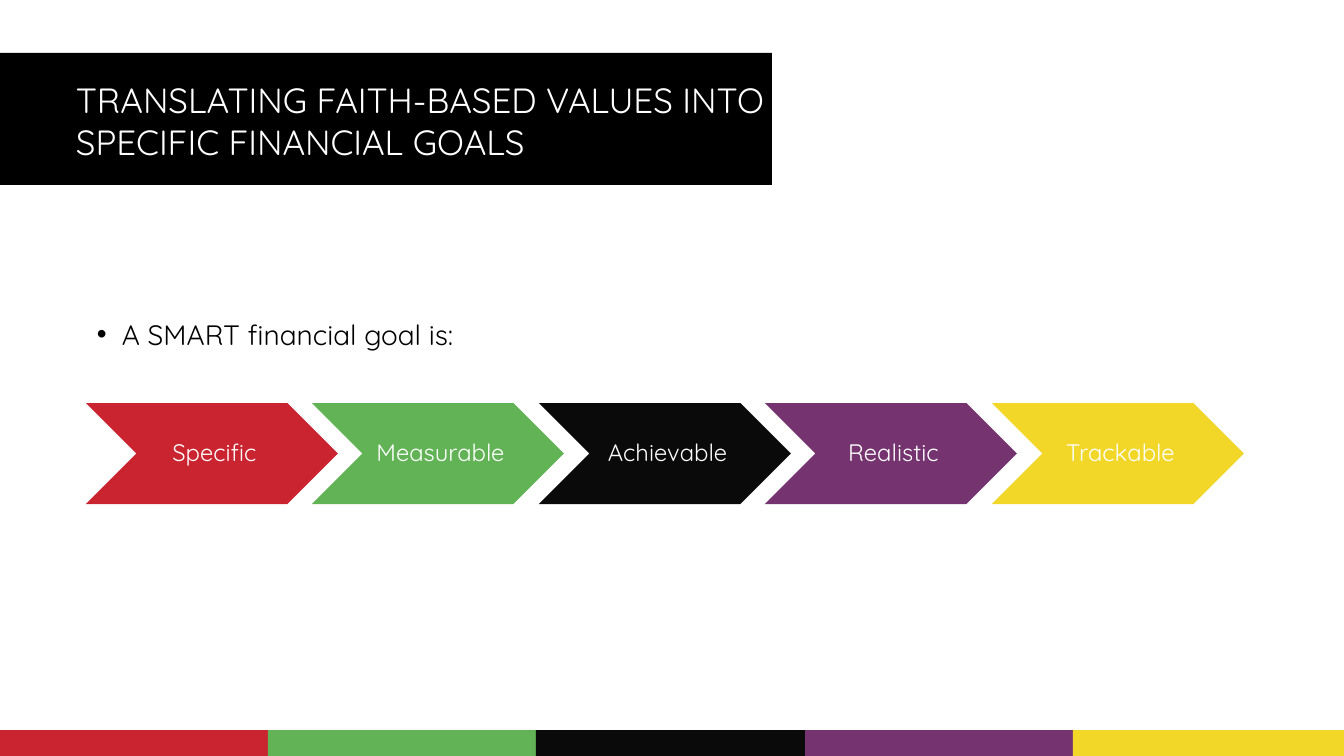
from pptx import Presentation
from pptx.dml.color import RGBColor as RGB
from pptx.enum.shapes import MSO_SHAPE as Kind
from pptx.enum.text import MSO_ANCHOR as Anchor, PP_ALIGN as Align
from pptx.oxml.ns import qn
from pptx.util import Emu, Pt
from lxml.etree import SubElement as Sub

TITLE = "TRANSLATING FAITH-BASED VALUES INTO SPECIFIC FINANCIAL GOALS"
LEAD = "A SMART financial goal is:"
GOALS = [
    ("Specific", "CA2430"),
    ("Measurable", "61B355"),
    ("Achievable", "0A0A0A"),
    ("Realistic", "753470"),
    ("Trackable", "F2D728"),
]
THEME = {
    "font": "Quicksand", "dark": "000000", "light": "FFFFFF",
    "title": 25, "lead": 20, "goal": 17,
}
WIDE, HIGH = 1344, 756
BAND = {"top": 730, "span": 1342}
ARROW = {"left": 86, "top": 403, "wide": 252, "high": 101, "span": 1133}


def px(n):
    return Emu(round(n * 9144000 / 1008))


def block(slide, kind, box, color):
    shape = slide.shapes.add_shape(kind, *map(px, box))
    shape.shadow.inherit = False
    shape.fill.solid()
    shape.fill.fore_color.rgb = RGB.from_string(color)
    shape.line.fill.background()
    return shape


def write(frame, text, size, color):
    frame.word_wrap = True
    para = frame.paragraphs[0]
    para.text = text
    para.font.name = THEME["font"]
    para.font.size = Pt(THEME[size])
    para.font.color.rgb = RGB.from_string(THEME[color])
    return para


def label(slide, box):
    return slide.shapes.add_textbox(*map(px, box)).text_frame


def bullet(para):
    props = para._p.get_or_add_pPr()
    props.set("marL", str(px(25)))
    props.set("indent", str(px(-25)))
    Sub(props, qn("a:buFont")).set("typeface", "Arial")
    Sub(props, qn("a:buChar")).set("char", "•")


def main():
    deck = Presentation()
    deck.slide_width, deck.slide_height = px(WIDE), px(HIGH)
    slide = deck.slides.add_slide(deck.slide_layouts[6])

    count = len(GOALS)
    for i, (_, color) in enumerate(GOALS):
        left = i * BAND["span"] // count
        right = WIDE if i == count - 1 else (i + 1) * BAND["span"] // count
        box = (left, BAND["top"], right - left, HIGH - BAND["top"])
        block(slide, Kind.RECTANGLE, box, color)

    block(slide, Kind.RECTANGLE, (0, 53, 772, 132), THEME["dark"])
    write(label(slide, (66, 74, 745, 95)), TITLE, "title", "light")

    frame = label(slide, (87, 316, 1159, 42))
    bullet(frame.paragraphs[0])
    write(frame, LEAD, "lead", "dark").line_spacing = 0.9

    for i, (name, color) in enumerate(GOALS):
        left = ARROW["left"] + i * ARROW["span"] // count
        box = (left, ARROW["top"], ARROW["wide"], ARROW["high"])
        frame = block(slide, Kind.CHEVRON, box, color).text_frame
        frame.margin_left = px(7)
        frame.margin_right = frame.margin_top = frame.margin_bottom = px(2)
        frame.vertical_anchor = Anchor.MIDDLE
        para = write(frame, name, "goal", "light")
        para.alignment = Align.CENTER
        para.line_spacing = 0.9

    deck.save("out.pptx")


if __name__ == "__main__":
    main()
